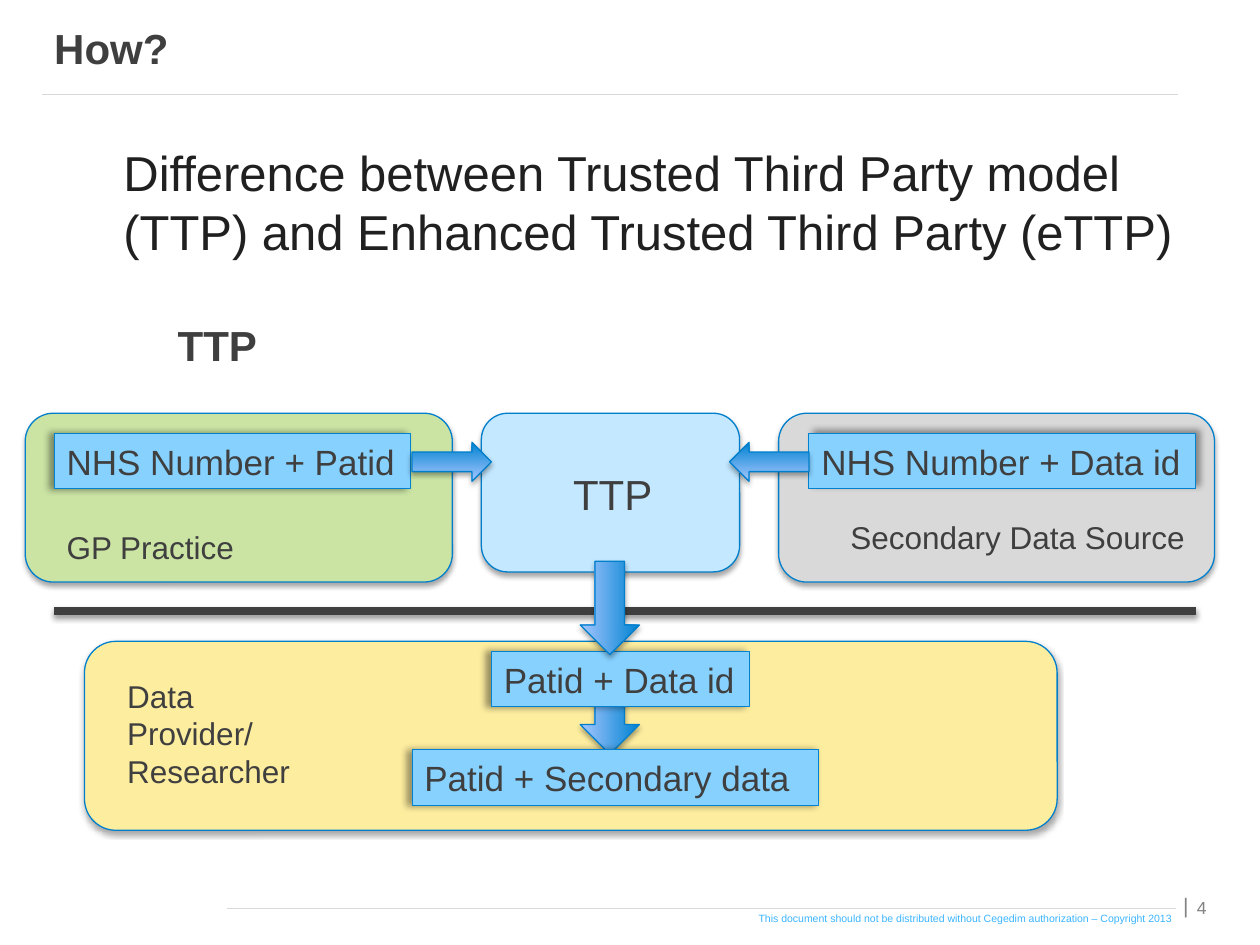
from lxml import etree
from pptx import Presentation
from pptx.dml.color import RGBColor
from pptx.enum.shapes import MSO_CONNECTOR as Link, MSO_SHAPE as Shape
from pptx.enum.text import MSO_ANCHOR as Anchor, MSO_AUTO_SIZE as Fit, PP_ALIGN as Align
from pptx.oxml.ns import qn
from pptx.util import Inches, Pt

INK, EDGE, RULE, GREY = "3F3F3F", "007FCC", "D9D9D9", "828282"
SOFT = (35, 3.1, 1.8, 90)  # alpha %, blur pt, distance pt, angle
PILL_H = 0.44


def color(code):
    return RGBColor.from_string(code)


def shade(part, alpha, blur, dist, angle):
    """Give a part an outer shadow."""
    props = part._element.spPr
    for old in props.findall(qn("a:effectLst")):
        props.remove(old)
    effects = etree.SubElement(props, qn("a:effectLst"))
    outer = etree.SubElement(effects, qn("a:outerShdw"), blurRad=str(Pt(blur)),
                             dist=str(Pt(dist)), dir=str(angle * 60000),
                             rotWithShape="0")
    black = etree.SubElement(outer, qn("a:srgbClr"), val="000000")
    etree.SubElement(black, qn("a:alpha"), val=str(alpha * 1000))


def style(par, size, code=INK, bold=False):
    font = par.font
    font.name, font.size, font.bold = "Arial", Pt(size), bold
    font.color.rgb = color(code)


def write(frame, text, size, code=INK, anchor=Anchor.TOP, wrap=True):
    frame.word_wrap, frame.vertical_anchor = wrap, anchor
    par = frame.paragraphs[0]
    par.text, par.alignment = text, Align.LEFT
    style(par, size, code)


def label(slide, box, text, size, code=INK, anchor=Anchor.TOP, wrap=True, inset=True):
    frame = slide.shapes.add_textbox(*map(Inches, box)).text_frame
    if not inset:
        frame.margin_left = frame.margin_right = 0
        frame.margin_top = frame.margin_bottom = 0
    write(frame, text, size, code, anchor, wrap)


def rule(slide, left, right, y, code, width, shadow=None):
    line = slide.shapes.add_connector(
        Link.STRAIGHT, Inches(left), Inches(y), Inches(right), Inches(y))
    line.line.color.rgb, line.line.width = color(code), Pt(width)
    if shadow:
        shade(line, *shadow)
    else:
        etree.SubElement(line._element.spPr, qn("a:effectLst"))


def block(slide, kind, box, fill, edge=EDGE, width=0.75, shadow=SOFT):
    part = slide.shapes.add_shape(kind, *map(Inches, box))
    if fill:
        part.fill.solid()
        part.fill.fore_color.rgb = color(fill)
    part.line.color.rgb, part.line.width = color(edge), Pt(width)
    shade(part, *shadow)
    return part


def panel(slide, box, fill):
    block(slide, Shape.ROUNDED_RECTANGLE, box, fill)


def pill(slide, left, top, width, text, angle=180):
    part = block(slide, Shape.RECTANGLE, (left, top, width, PILL_H), "87D1FF",
                 "0082D1", 0.5, (40, 4, 3, angle))
    write(part.text_frame, text, 20, anchor=Anchor.MIDDLE)


def arrow(slide, kind, box, turn):
    part = block(slide, kind, box, None)
    part.rotation = turn
    part.fill.gradient()
    part.fill.gradient_angle = 90
    for stop, code, pos in zip(part.fill.gradient_stops, ("0082D1", "A7C7FF"), (0, 1)):
        stop.color.rgb, stop.position = color(code), pos


def heading(slide, box):
    title = slide.shapes.title
    title.left, title.top, title.width, title.height = map(Inches, box)
    write(title.text_frame, "How?", 24, anchor=Anchor.MIDDLE)
    title.text_frame.paragraphs[0].font.bold = True
    x, y, w, h = box
    rule(slide, x, x + w + 0.02, y + h, RULE, 0.75)


def intro(slide, box):
    body = slide.placeholders[1]
    body.left, body.top, body.width, body.height = map(Inches, box)
    frame = body.text_frame
    frame.auto_size, frame.vertical_anchor = Fit.NONE, Anchor.TOP
    rows = (("Difference between Trusted Third Party model (TTP) and "
             "Enhanced Trusted Third Party (eTTP)", 0, 0.38, 28, "202020", 0, 1),
            ("TTP", 1, 0.81, 24, INK, 5, 2))
    for text, level, indent, size, code, before, lines in rows:
        par = frame.add_paragraph() if level else frame.paragraphs[0]
        par.text, par.level = text, level
        props = par._p.get_or_add_pPr()
        props.set("marL", str(Inches(indent)))
        props.set("indent", "0")
        etree.SubElement(props, qn("a:buNone"))
        par.space_before, par.line_spacing = Pt(before), float(lines)
        style(par, size, code, bold=level == 1)


def source(slide, box, fill, tag, inset, width, angle, name, shift):
    """A data source: panel, identifier pill and name below."""
    x, y, w, h = box
    panel(slide, box, fill)
    pill(slide, x + inset, y + 0.16, width, tag, angle)
    dx, dy = shift
    label(slide, (x + dx, y + dy, 2.99, 0.4), name, 18)


def provider(slide, box):
    x, y, w, h = box
    panel(slide, box, "FDED9F")
    arrow(slide, Shape.LEFT_ARROW, (x + 3.88, y + 0.37, 0.58, 0.47), 270)
    pill(slide, x + 3.23, y + 0.08, 2.05, "Patid + Data id")
    pill(slide, x + 2.6, y + 0.86, 3.23, "Patid + Secondary data")
    label(slide, (x + 0.24, y + 0.23, 1.65, 1.01), "Data Provider/ Researcher", 18)


def hub(slide, box):
    """The trusted party, with arrows in from both sides and out below."""
    x, y, w, h = box
    panel(slide, box, "C3E8FF")
    arrow(slide, Shape.LEFT_ARROW, (x + 0.65, y + h + 0.05, 0.74, 0.47), 270)
    arrow(slide, Shape.LEFT_ARROW, (x - 0.55, y + 0.23, 0.63, 0.31), 180)
    arrow(slide, Shape.RIGHT_ARROW, (x + w - 0.08, y + 0.23, 0.63, 0.31), 180)
    label(slide, (x + 0.63, y + 0.39, 1.18, 0.5), "TTP", 24)


def footer(slide, box):
    x, y, w, h = box
    rule(slide, x, x + 7.53, y + 0.21, RULE, 1)
    label(slide, (x + 4.22, y + 0.24, 3.38, 0.1),
          "This document should not be distributed without Cegedim authorization"
          " – Copyright 2013", 6, "3BB5FF", wrap=False, inset=False)
    label(slide, (x + 7.59, y + 0.08, 0.08, 0.2), "|", 12, GREY, inset=False)
    label(slide, (x + 7.6, y, 0.58, h), "4", 10, GREY, Anchor.MIDDLE)


def main():
    deck = Presentation()
    deck.slide_width, deck.slide_height = Inches(10), Inches(7.5)
    slide = deck.slides.add_slide(deck.slide_layouts[1])
    footer(slide, (1.8, 7, 8.18, 0.4))
    heading(slide, (0.33, 0, 9, 0.75))
    intro(slide, (0.5, 1.08, 9, 5.62))
    source(slide, (6.18, 3.28, 3.46, 1.34), "D9D9D9", "NHS Number + Data id",
           0.24, 3.07, 315, "Secondary Data Source", (0.47, 0.78))
    source(slide, (0.2, 3.28, 3.39, 1.34), "CBE4A4", "NHS Number + Patid",
           0.23, 2.83, 180, "GP Practice", (0.23, 0.86))
    rule(slide, 0.43, 9.49, 4.85, INK, 4.5, (38, 3.1, 1.6, 90))
    provider(slide, (0.67, 5.09, 7.72, 1.5))
    hub(slide, (3.82, 3.28, 2.05, 1.26))
    deck.save("out.pptx")


if __name__ == "__main__":
    main()
